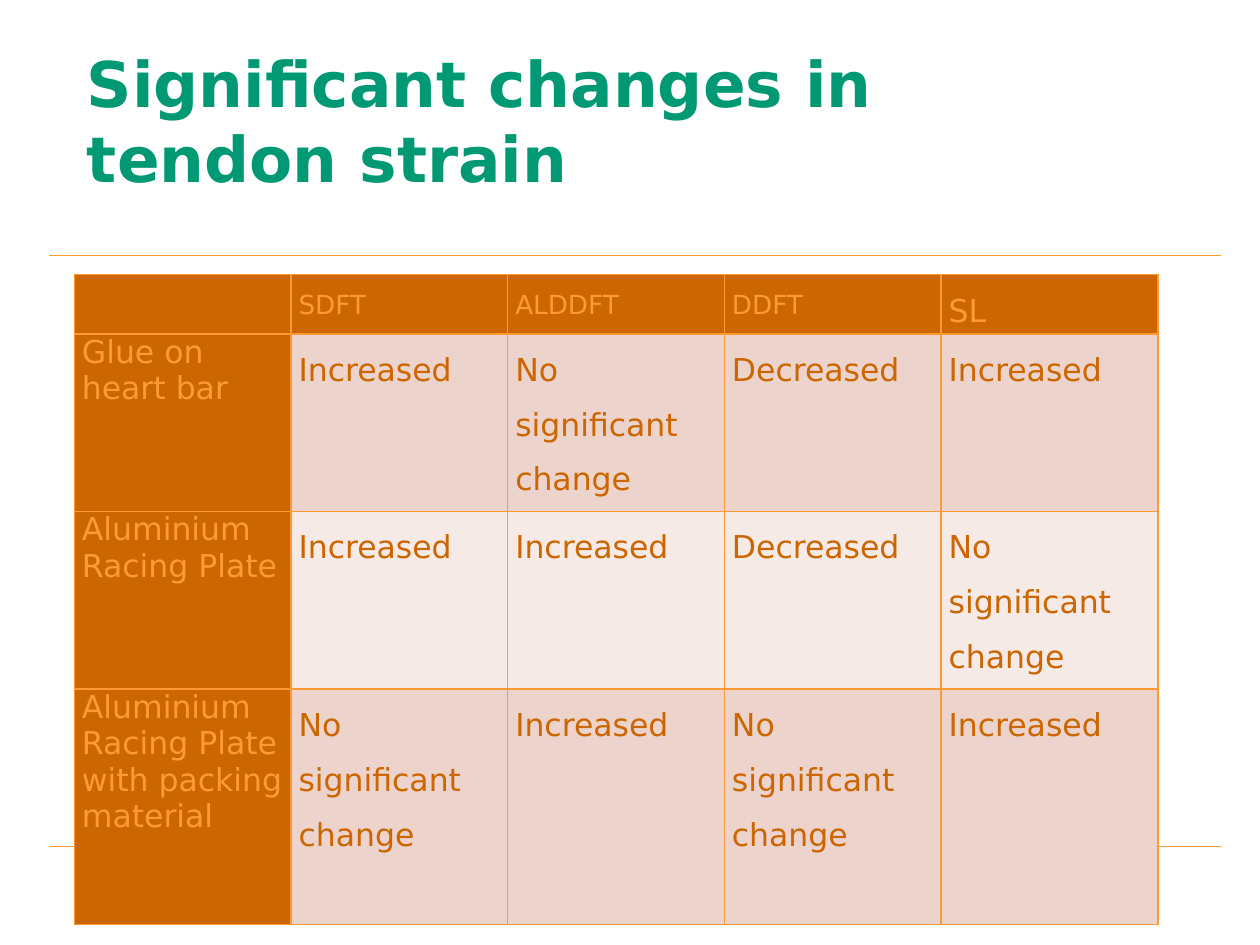
"""Build a slide with a table of significant changes in tendon strain."""
from lxml import etree
from pptx import Presentation
from pptx import util as u
from pptx.dml.color import RGBColor
from pptx.enum import shapes, text
from pptx.oxml import ns

COLORS = {
    "title": "009973",
    "line": "FF9933",
    "dark": "CC6600",
    "band": "ECD3CC",
    "light": "F6EAE7",
}
FONT = "DejaVu Sans"
SAME, UP, DOWN = "No significant change", "Increased", "Decreased"
ROWS = [
    ["", "SDFT", "ALDDFT", "DDFT", "SL"],
    ["Glue on heart bar", UP, SAME, DOWN, UP],
    ["Aluminium Racing Plate", UP, UP, DOWN, SAME],
    ["Aluminium Racing Plate with packing material", SAME, UP, SAME, UP],
]
ROW_HEIGHTS = [0.47, 1.41, 1.41, 1.87]
COLUMN_WIDTH = 1.72


def style_font(font, size, color, bold=False):
    font.name, font.size, font.bold = FONT, u.Pt(size), bold
    font.color.rgb = RGBColor.from_string(COLORS[color])


def add_borders(cell):
    properties = cell._tc.get_or_add_tcPr()
    for side in ("lnL", "lnR", "lnT", "lnB"):
        border = etree.SubElement(properties, ns.qn(f"a:{side}"), w=str(u.Pt(1)))
        fill = etree.SubElement(border, ns.qn("a:solidFill"))
        etree.SubElement(fill, ns.qn("a:srgbClr"), val=COLORS["line"])


deck = Presentation()
deck.slide_width, deck.slide_height = u.Inches(10), u.Inches(7.5)
page = deck.slides.add_slide(deck.slide_layouts[5])

for y in (6.72, 2.03):
    rule = page.shapes.add_connector(
        shapes.MSO_CONNECTOR.STRAIGHT,
        u.Inches(0.39), u.Inches(y), u.Inches(9.69), u.Inches(y))
    rule.line.color.rgb = RGBColor.from_string(COLORS["line"])
    rule.line.width = u.Pt(0.75)
    etree.SubElement(rule._element.spPr, ns.qn("a:effectLst"))

title = page.shapes.title
title.left, title.top = u.Inches(0.59), u.Inches(0.16)
title.width, title.height = u.Inches(8.22), u.Inches(1.44)
frame = title.text_frame
frame.text = "Significant changes in tendon strain"
frame.word_wrap = True
frame.auto_size = text.MSO_AUTO_SIZE.NONE
frame.vertical_anchor = text.MSO_ANCHOR.BOTTOM
frame.paragraphs[0].alignment = text.PP_ALIGN.LEFT
style_font(frame.paragraphs[0].runs[0].font, 36, "title", bold=True)

table = page.shapes.add_table(
    len(ROWS), len(ROWS[0]), u.Inches(0.59), u.Inches(2.18),
    u.Inches(COLUMN_WIDTH * len(ROWS[0])), u.Inches(sum(ROW_HEIGHTS))).table
for column in table.columns:
    column.width = u.Inches(COLUMN_WIDTH)

for row_index, (labels, height) in enumerate(zip(ROWS, ROW_HEIGHTS)):
    table.rows[row_index].height = u.Inches(height)
    for column_index, label in enumerate(labels):
        is_heading = row_index == 0 or column_index == 0
        cell = table.cell(row_index, column_index)
        add_borders(cell)
        fill = "dark" if is_heading else "band" if row_index % 2 else "light"
        cell.fill.solid()
        cell.fill.fore_color.rgb = RGBColor.from_string(COLORS[fill])
        cell.margin_left = cell.margin_right = u.Inches(0.06)
        cell.margin_top = cell.margin_bottom = 0
        if not label:
            continue
        cell.text_frame.text = label
        para = cell.text_frame.paragraphs[0]
        if column_index:
            para.line_spacing = 1.5
        size = 15 if row_index == 0 and label != "SL" else 18
        style_font(para.runs[0].font, size, "line" if is_heading else "dark")

deck.save("out.pptx")
